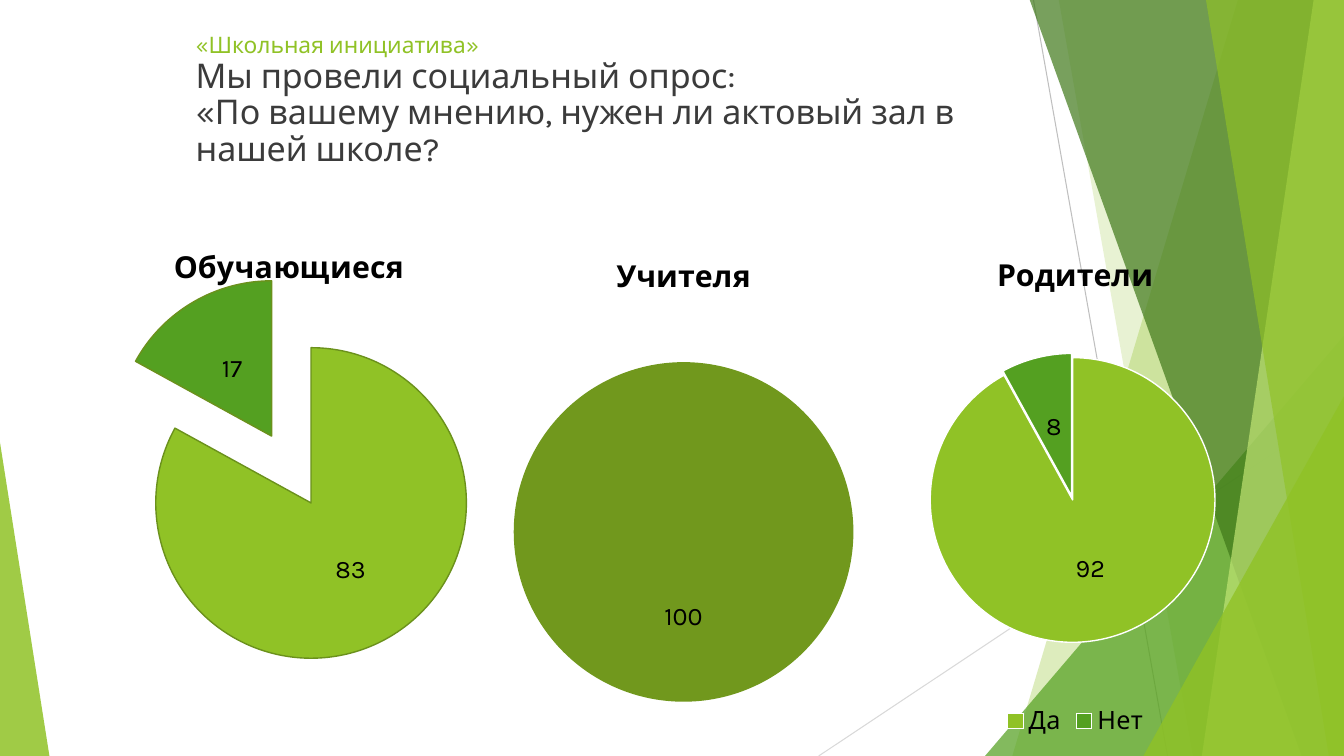
from lxml import etree
from pptx import Presentation, util as u
from pptx.chart.data import CategoryChartData
from pptx.dml.color import RGBColor
from pptx.enum import chart as ch, shapes, text
from pptx.oxml import parse_xml
from pptx.oxml.ns import nsdecls, qn

COLORS = {"lime": "90C226", "green": "54A021", "forest": "3F7819", "pale": "C0E474",
          "olive": "71981D", "edge": "6B911C", "heading": "3B3B3B", "label": "000000",
          "white": "FFFFFF", "ray": "BFBFBF", "ray_light": "D9D9D9"}
FONT = "Karla"


def rgb(name):
    """Return the palette colour of that name."""
    return RGBColor.from_string(COLORS[name])


def inches(*lengths):
    """Convert numbers to lengths in inches."""
    return [u.Inches(length) for length in lengths]


def style(font, size, color, bold=False):
    """Set the typeface, size, weight and colour of a font."""
    font.name, font.size, font.bold = FONT, u.Pt(size), bold
    font.color.rgb = rgb(color)


def paint(facet, color, opacity):
    """Give a facet a translucent fill without line or shadow."""
    facet.shadow.inherit = False
    facet.line.fill.background()
    facet.fill.solid()
    facet.fill.fore_color.rgb = rgb(color)
    tint = facet.fill._xPr.find(qn("a:solidFill"))[0]
    etree.SubElement(tint, qn("a:alpha"), val=str(opacity * 1000))


def add_ray(slide, start, end, color):
    """Draw a thin straight line across the backdrop."""
    ray = slide.shapes.add_connector(shapes.MSO_CONNECTOR.STRAIGHT, *inches(*start, *end))
    ray.line.color.rgb = rgb(color)
    ray.line.width = u.Pt(0.75)
    etree.SubElement(ray._element.spPr, qn("a:effectLst"))


def add_band(slide, top_x, foot_x, color, opacity):
    """Fill the area from a slanted left edge to the right side of the slide."""
    corners = [(top_x, -0.01), (13.33, -0.01), (13.33, 7.5), (foot_x, 7.5)]
    start, *rest = [inches(*corner) for corner in corners]
    builder = slide.shapes.build_freeform(*start)
    builder.add_line_segments(rest, close=True)
    paint(builder.convert_to_shape(), color, opacity)


def add_wedge(slide, box, apex, color, opacity):
    """Draw a triangle whose apex is at the given share of its width."""
    wedge = slide.shapes.add_shape(shapes.MSO_SHAPE.ISOSCELES_TRIANGLE, *inches(*box))
    wedge.adjustments[0] = apex
    paint(wedge, color, opacity)


def add_backdrop(slide):
    """Draw the green facets along the sides, from back to front."""
    add_ray(slide, (10.25, 0), (11.58, 7.5), "ray")
    add_ray(slide, (13.33, 4.03), (8.12, 7.5), "ray_light")
    add_band(slide, 12.28, 10.04, "lime", 30)
    add_band(slide, 10.5, 11.83, "lime", 20)
    add_wedge(slide, (9.77, 3.33, 3.56, 4.17), 1, "green", 72)
    add_band(slide, 10.21, 12.91, "forest", 70)
    add_band(slide, 13.03, 11.92, "pale", 70)
    add_band(slide, 11.96, 13.18, "lime", 65)
    add_wedge(slide, (11.34, 3.93, 1.99, 3.57), 1, "lime", 80)
    add_wedge(slide, (0, 4.39, 0.49, 3.11), 0, "lime", 85)


def add_heading(slide, box):
    """Place the project name and the survey question in the title."""
    heading = slide.shapes.title
    heading.left, heading.top, heading.width, heading.height = inches(*box)
    frame = heading.text_frame
    frame.word_wrap = True
    frame.auto_size = text.MSO_AUTO_SIZE.NONE
    frame.vertical_anchor = text.MSO_ANCHOR.TOP
    lines = [("«Школьная инициатива»", 16.2, "lime"),
             ("Мы провели социальный опрос:", 24.3, "heading"),
             ("«По вашему мнению, нужен ли актовый зал в нашей школе?", 24.3, "heading")]
    paragraph = frame.paragraphs[0]
    paragraph.alignment = text.PP_ALIGN.LEFT
    paragraph.line_spacing = 0.9
    for number, (words, size, color) in enumerate(lines):
        if number:
            paragraph.add_line_break()
        run = paragraph.add_run()
        run.text = words
        style(run.font, size, color)


def layout_xml(target, **settings):
    """Build a manual chart layout."""
    parts = "".join(f'<c:{key} val="{value}"/>' for key, value in settings.items())
    inner = '<c:layoutTarget val="inner"/>' if target else ""
    return parse_xml(f'<c:layout {nsdecls("c")}><c:manualLayout>{inner}{parts}'
                     '</c:manualLayout></c:layout>')


def add_survey_pie(slide, box, group, answers, plot, slices, edge=None, legend=False):
    """Chart one group's answers; a slice is colour, explosion and label shift."""
    data = CategoryChartData()
    data.categories = list(answers)
    data.add_series(group, list(answers.values()))
    pie = slide.shapes.add_chart(ch.XL_CHART_TYPE.PIE, *inches(*box), data).chart
    style(pie.font, 18, "label")
    pie.has_title = True
    title = pie.chart_title.text_frame.paragraphs[0].add_run()
    title.text = group
    style(title.font, 21.6, "label", bold=True)
    pie.has_legend = legend
    if legend:
        pie.legend.position = ch.XL_LEGEND_POSITION.BOTTOM
        pie.legend.include_in_layout = False
        style(pie.legend.font, 18, "label")

    area = pie._chartSpace.chart.plotArea
    for old in area.findall(qn("c:layout")):
        area.remove(old)
    x, y, w, h = plot
    area.insert(0, layout_xml(True, xMode="edge", yMode="edge", x=x, y=y, w=w, h=h))

    pie.plots[0].vary_by_categories = True
    series = pie.plots[0].series[0]
    labels = series.data_labels
    labels.show_value = True
    style(labels.font, 18, "label")
    for index, (color, explosion, shift) in enumerate(slices):
        point = series.points[index]
        point.format.fill.solid()
        point.format.fill.fore_color.rgb = rgb(color)
        if edge:
            point.format.line.color.rgb = rgb(edge)
            point.format.line.width = u.Pt(1)
        else:
            point.format.line.fill.background()
        if explosion:
            sector = series._element.findall(qn("c:dPt"))[index]
            sector.find(qn("c:spPr")).addprevious(
                parse_xml(f'<c:explosion {nsdecls("c")} val="{explosion}"/>'))
        point.data_label.position = ch.XL_LABEL_POSITION.CENTER
        label = series._element.find(qn("c:dLbls")).findall(qn("c:dLbl"))[index]
        label.find(qn("c:idx")).addnext(layout_xml(False, x=shift[0], y=shift[1]))


def main():
    """Build the survey slide and save it."""
    deck = Presentation()
    deck.slide_width, deck.slide_height = inches(13.33, 7.5)
    slide = deck.slides.add_slide(deck.slide_layouts[5])
    add_backdrop(slide)
    add_heading(slide, (1.84, 0.29, 8.44, 1.69))
    add_survey_pie(slide, (0.37, 2.25, 4.99, 4.34), "Обучающиеся", {"Да": 83, "Нет": 17},
                   (0.1, 0.2, 0.81, 0.71),
                   [("lime", 25, (0, 0)), ("green", 25, (0, 0))], edge="edge")
    add_survey_pie(slide, (3.89, 2.33, 5.78, 4.68), "Учителя", {"1": 100},
                   (0.09, 0.18, 0.82, 0.72), [("olive", 25, (0, 0))])
    add_survey_pie(slide, (8, 2.32, 5.33, 5.03), "Родители", {"Да": 92, "Нет": 8},
                   (0.23, 0.24, 0.53, 0.57),
                   [("lime", 0, (0, 0)), ("green", 3, (0, 0))], edge="white", legend=True)
    deck.save("out.pptx")


if __name__ == "__main__":
    main()
